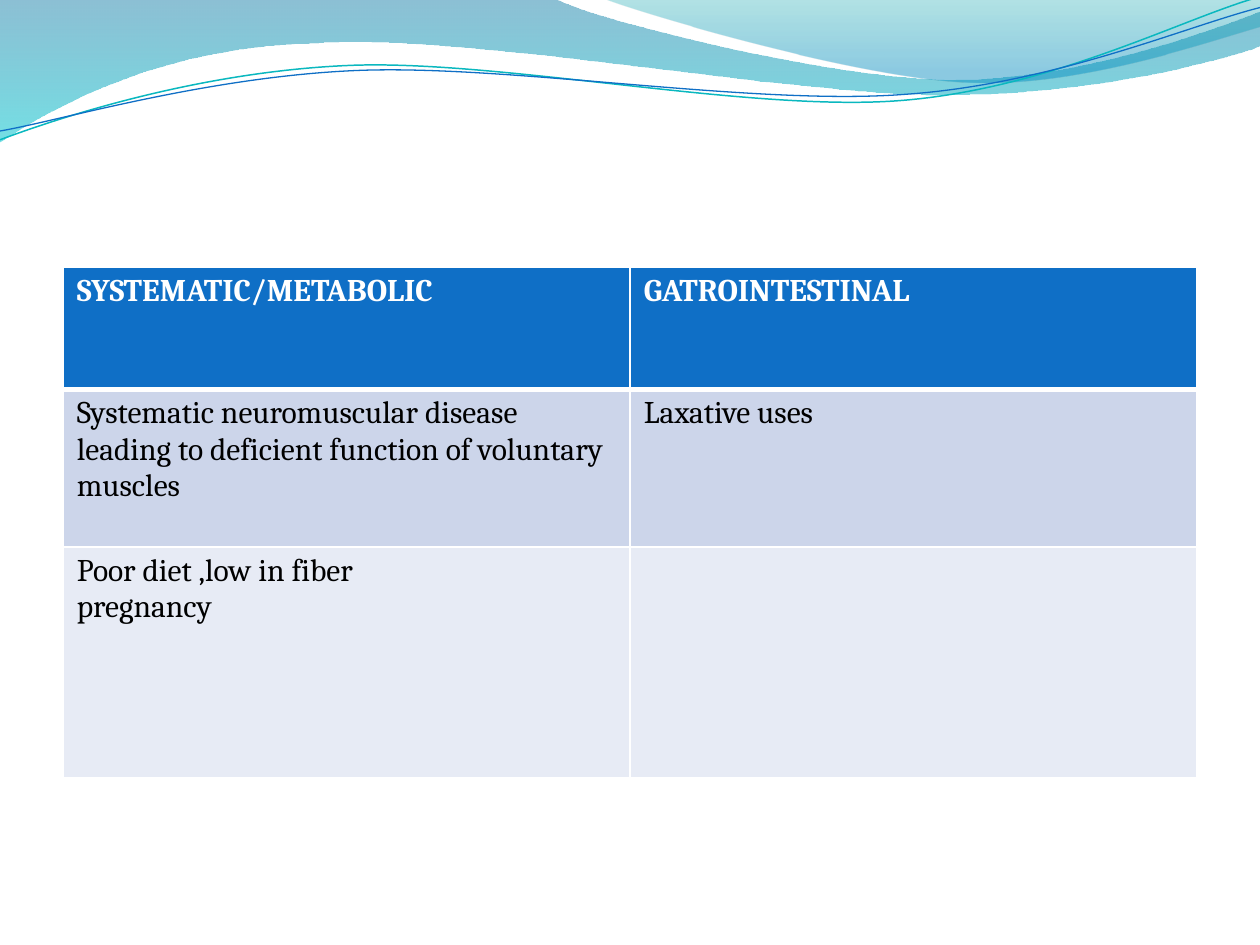
import lxml.etree
import pptx
import pptx.dml.color
import pptx.oxml
import pptx.oxml.ns
import pptx.util

COLUMNS, ROWS = 1000, 750
UNIT = pptx.util.Inches(10) // COLUMNS
FONT = "Cambria"
COLORS = {
    "blue": "0F6FC6",
    "teal": "0AB8BF",
    "wave_top": "0074A1",
    "wave_bottom": "00C6CF",
    "crest_top": "00A1A9",
    "crest_bottom": "008BBF",
    "band_dark": "CCD5EA",
    "band_light": "E7EBF5",
    "white": "FFFFFF",
    "black": "000000",
}

WAVES = [
    (
        [(0, 0), (440, -1), (476, 17, 664, 63, 758, 63), (853, 63, 958, 26, 1000, 9),
         (1001, 36), (983, 44, 870, 76, 746, 75), (622, 75, 382, 28, 257, 34),
         (129, 36, 46, 83, -1, 113)],
        [(0, "wave_top", 45), (1, "wave_bottom", 55)],
    ),
    (
        [(479, -1), (509, 11, 682, 62, 769, 65), (856, 69, 961, 32, 1000, 21), (1000, 0)],
        [(0, "crest_top", 30), (0.8, "crest_bottom", 45)],
    ),
]
STRANDS = [
    ([(0, 111), (48, 93, 158, 57, 277, 52), (395, 47, 593, 89, 713, 80),
      (833, 71, 938, 15, 998, -2)], "teal", 0.85),
    ([(0, 104), (47, 96, 164, 61, 283, 56), (403, 51, 597, 84, 717, 75),
      (836, 67, 941, 21, 1000, 6)], "blue", 0.75),
]

TABLE_ROWS = [
    (97, "blue", ["SYSTEMATIC/METABOLIC", "GATROINTESTINAL"]),
    (125, "band_dark", [
        "Systematic neuromuscular disease leading to deficient function of voluntary muscles",
        "Laxative uses",
    ]),
    (183, "band_light", ["Poor diet ,low in fiber\npregnancy", ""]),
]


def color(name):
    return pptx.dml.color.RGBColor.from_string(COLORS[name])


def bend_segments(shape, segments):
    qualify = pptx.oxml.ns.qn
    lines = iter(shape._element.spPr.findall(".//" + qualify("a:lnTo")))
    for segment in segments:
        pieces = [next(lines) for _ in range(len(segment) // 2)]
        if len(pieces) == 1:
            continue
        curve = lxml.etree.Element(qualify("a:cubicBezTo"))
        pieces[0].addprevious(curve)
        for piece in pieces:
            curve.append(piece[0])
            piece.getparent().remove(piece)


def add_outline(slide, box, path, close):
    left, top = box[:2]
    points = [
        ((left + segment[i]) * UNIT, (top + segment[i + 1]) * UNIT)
        for segment in path for i in range(0, len(segment), 2)
    ]
    builder = slide.shapes.build_freeform(*points[0], scale=1.0)
    builder.add_line_segments(points[1:], close=close)
    shape = builder.convert_to_shape()
    bend_segments(shape, path[1:])
    shape.shadow.inherit = False
    return shape


def fill_gradient(shape, stops):
    shape.fill.gradient()
    shape.fill.gradient_angle = 270
    for stop, (position, name, opacity) in zip(shape.fill.gradient_stops, stops):
        stop.position = position
        stop.color.rgb = color(name)
    tints = shape._element.spPr.findall(".//" + pptx.oxml.ns.qn("a:srgbClr"))
    for tint, (position, name, opacity) in zip(tints, stops):
        tint.append(pptx.oxml.parse_xml(
            f'<a:alpha {pptx.oxml.ns.nsdecls("a")} val="{opacity * 1000}"/>'))


def add_banner(slide, box):
    for path, stops in WAVES:
        wave = add_outline(slide, box, path, True)
        fill_gradient(wave, stops)
        wave.line.fill.background()
    for path, name, width in STRANDS:
        strand = add_outline(slide, box, path, False)
        strand.fill.background()
        strand.line.color.rgb = color(name)
        strand.line.width = pptx.util.Pt(width)


def add_borders(cell, widths):
    properties = cell._tc.get_or_add_tcPr()
    for side, width in zip("LRTB", widths):
        properties.append(pptx.oxml.parse_xml(
            f'<a:ln{side} {pptx.oxml.ns.nsdecls("a")} w="{pptx.util.Pt(width)}">'
            f'<a:solidFill><a:srgbClr val="{COLORS["white"]}"/></a:solidFill></a:ln{side}>'))


def add_causes_table(slide, box):
    left, top, width, height = (length * UNIT for length in box)
    column_count = len(TABLE_ROWS[0][2])
    table = slide.shapes.add_table(
        len(TABLE_ROWS), column_count, left, top, width, height).table
    for column in table.columns:
        column.width = width // column_count
    for row_index, (row_height, band, texts) in enumerate(TABLE_ROWS):
        table.rows[row_index].height = row_height * UNIT
        header = row_index == 0
        for column_index, text in enumerate(texts):
            cell = table.cell(row_index, column_index)
            add_borders(cell, (1, 1, 3 if row_index == 1 else 1, 3 if header else 1))
            cell.fill.solid()
            cell.fill.fore_color.rgb = color(band)
            cell.margin_left = cell.margin_right = 11 * UNIT
            cell.margin_top = cell.margin_bottom = 5 * UNIT
            if not text:
                continue
            cell.text = text
            for paragraph in cell.text_frame.paragraphs:
                paragraph.font.name = FONT
                paragraph.font.size = pptx.util.Pt(18)
                paragraph.font.bold = header
                paragraph.font.color.rgb = color("white" if header else "black")


def main():
    presentation = pptx.Presentation()
    presentation.slide_width = COLUMNS * UNIT
    presentation.slide_height = ROWS * UNIT
    slide = presentation.slides.add_slide(presentation.slide_layouts[6])
    add_banner(slide, (0, 0, COLUMNS, 113))
    add_causes_table(slide, (50, 212, 900, sum(row[0] for row in TABLE_ROWS)))
    presentation.save("out.pptx")


if __name__ == "__main__":
    main()
